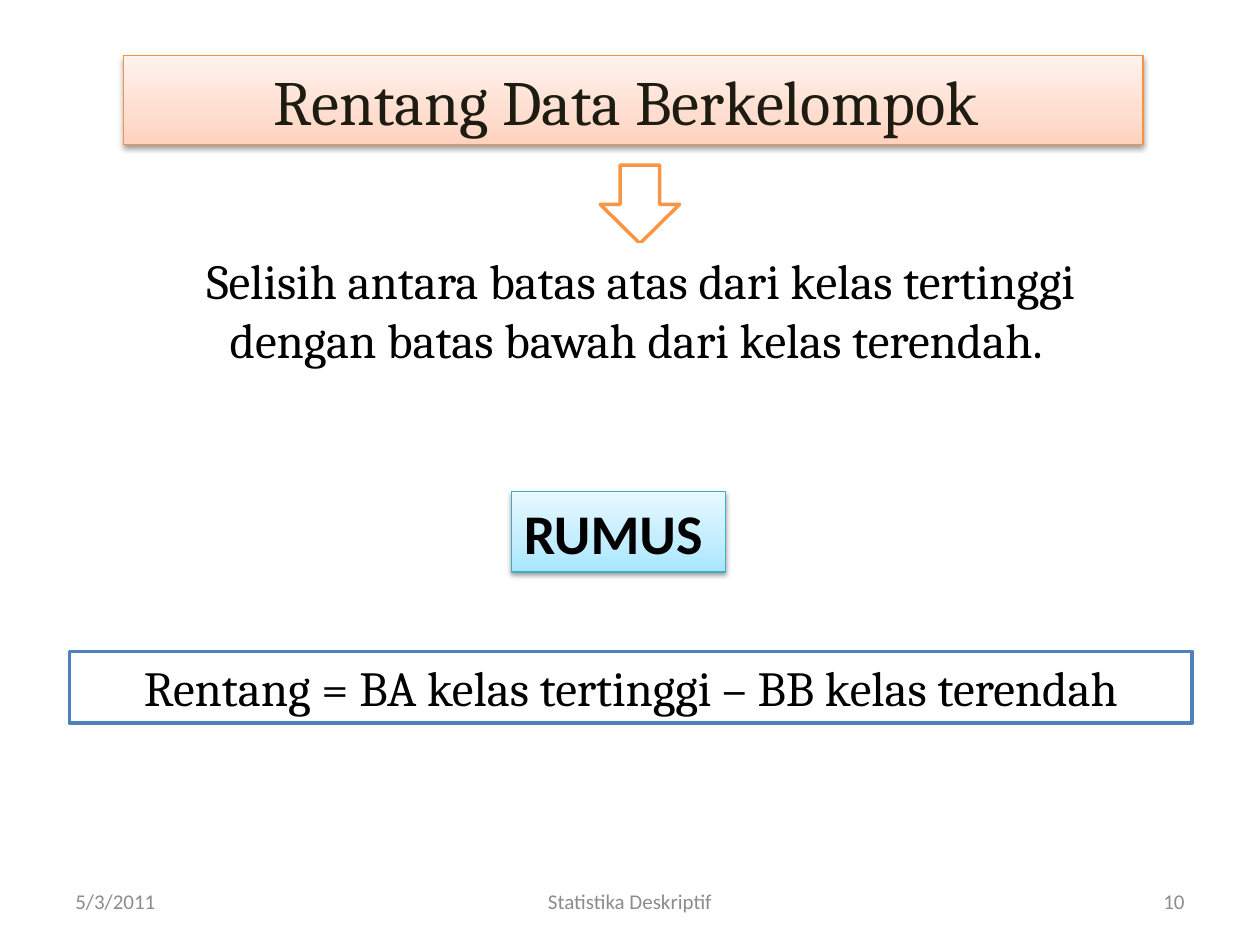
from copy import deepcopy
from lxml.etree import SubElement
from pptx import Presentation
from pptx.dml.color import RGBColor
from pptx.enum.shapes import MSO_SHAPE
from pptx.enum.text import MSO_ANCHOR, PP_ALIGN
from pptx.oxml.ns import qn
from pptx.util import Cm, Pt

HUES = {
    "white": "FFFFFF", "black": "000000", "ink": "1E1C11", "gray": "8C8C8C",
    "orange": "F79646", "rim": "F69240", "teal": "46AAC5", "blue": "4F81BD",
}
PEACH = ["FFD2BD", "FFDED0", "FFF2ED"]
SKY = ["A7E6FF", "C1EDFF", "E7F8FF"]


def write(shape, text, size=28, font="Cambria", hue="black", bold=False,
          align=PP_ALIGN.CENTER, anchor=MSO_ANCHOR.TOP):
    frame = shape.text_frame
    frame.word_wrap = True
    frame.vertical_anchor = anchor
    frame.margin_left = frame.margin_right = Cm(0.25)
    frame.margin_top = frame.margin_bottom = Cm(0.13)
    para = frame.paragraphs[0]
    para.alignment = align
    run = para.add_run()
    run.text = text
    run.font.size = Pt(size)
    run.font.name = font
    run.font.bold = bold
    run.font.color.rgb = RGBColor.from_string(HUES[hue])


def paint(shape, fill, line, width):
    shape.shadow.inherit = False
    shape.line.color.rgb = RGBColor.from_string(HUES[line])
    shape.line.width = Pt(width)
    if isinstance(fill, str):
        shape.fill.solid()
        shape.fill.fore_color.rgb = RGBColor.from_string(HUES[fill])
        return
    shape.fill.gradient()
    shape.fill.gradient_angle = 90
    props = shape.element.spPr
    stops = props.find(".//" + qn("a:gsLst"))
    stops.insert(1, deepcopy(stops[0]))
    for stop, hue, pos in zip(shape.fill.gradient_stops, fill, (0, 0.35, 1)):
        stop.color.rgb = RGBColor.from_string(hue)
        stop.position = pos
    glow = SubElement(props.find(qn("a:effectLst")), qn("a:outerShdw"),
                      blurRad=str(Pt(3.1)), dist=str(Pt(1.6)),
                      dir="5400000", rotWithShape="0")
    tint = SubElement(glow, qn("a:srgbClr"), val=HUES["black"])
    SubElement(tint, qn("a:alpha"), val="38000")


deck = Presentation()
deck.slide_width, deck.slide_height = Cm(25.4), Cm(19.05)
slide = deck.slides.add_slide(deck.slide_layouts[5])
shapes = slide.shapes

feet = [
    ("5/3/2011", 1.27, 5.93, PP_ALIGN.LEFT),
    ("Statistika Deskriptif", 8.68, 8.04, PP_ALIGN.CENTER),
    ("10", 18.2, 5.93, PP_ALIGN.RIGHT),
]
for text, left, width, align in feet:
    foot = shapes.add_textbox(Cm(left), Cm(17.66), Cm(width), Cm(1.01))
    write(foot, text, size=12, font="Calibri", hue="gray", align=align,
          anchor=MSO_ANCHOR.MIDDLE)

title = shapes.title
title.left, title.top = Cm(2.49), Cm(1.12)
title.width, title.height = Cm(20.55), Cm(1.8)
paint(title, PEACH, "rim", 0.75)
write(title, "Rentang Data Berkelompok ", size=36, hue="ink")

arrow = shapes.add_shape(MSO_SHAPE.DOWN_ARROW, Cm(12.1), Cm(3.33), Cm(1.6), Cm(1.58))
paint(arrow, "white", "orange", 2)

sense = shapes.add_shape(MSO_SHAPE.RECTANGLE, Cm(2.69), Cm(4.93), Cm(20.45), Cm(2.64))
paint(sense, "white", "white", 2)
write(sense, "Selisih antara batas atas dari kelas tertinggi "
             "dengan batas bawah dari kelas terendah. ")

label = shapes.add_shape(MSO_SHAPE.RECTANGLE, Cm(10.31), Cm(9.91), Cm(4.32), Cm(1.62))
paint(label, SKY, "teal", 0.75)
write(label, "RUMUS", size=32, font="Calibri", bold=True, align=PP_ALIGN.LEFT)

rule = shapes.add_shape(MSO_SHAPE.RECTANGLE, Cm(1.4), Cm(13.13), Cm(22.63), Cm(1.45))
paint(rule, "white", "blue", 2)
write(rule, "Rentang = BA kelas tertinggi – BB kelas terendah",
      anchor=MSO_ANCHOR.MIDDLE)

deck.save("out.pptx")
